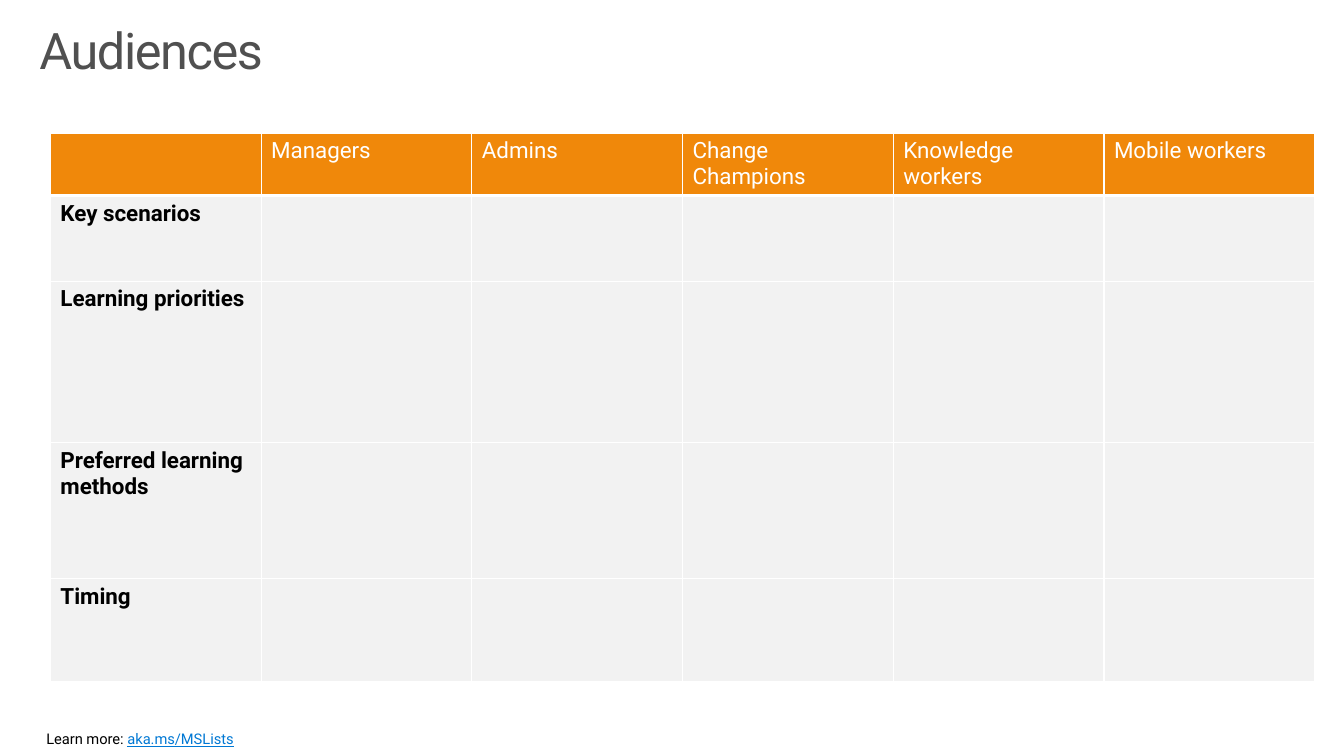
from lxml import etree
from pptx import Presentation
from pptx.dml.color import RGBColor
from pptx.enum.text import MSO_ANCHOR, PP_ALIGN
from pptx.oxml.ns import qn
from pptx.util import Inches, Pt

FONT = "Roboto"
WHITE, BLACK, GREY = "FFFFFF", "000000", "505050"
ORANGE, PALE, LINK = "F0880A", "F2F2F2", "0078D4"

AUDIENCES = ["Managers", "Admins", "Change Champions", "Knowledge workers",
             "Mobile workers"]
TOPICS = ["Key scenarios", "Learning priorities", "Preferred learning methods",
          "Timing"]
ROW_HEIGHTS = [0.62, 0.85, 1.6, 1.35, 1.02]
COLUMN_WIDTH = 2.09


def color(value):
    return RGBColor.from_string(value)


def set_font(font, size, value, bold=False):
    font.name = FONT
    font.size = Pt(size)
    font.bold = bold
    font.color.rgb = color(value)


def prepare_frame(frame):
    frame.margin_left = frame.margin_top = 0
    frame.margin_right = frame.margin_bottom = 0
    frame.word_wrap = True
    frame.vertical_anchor = MSO_ANCHOR.TOP
    para = frame.paragraphs[0]
    para.line_spacing = 0.9
    para.alignment = PP_ALIGN.LEFT
    return para


def add_title(page, text):
    title = page.shapes.title
    title.left, title.top = Inches(0.39), Inches(0.26)
    title.width, title.height = Inches(12.75), Inches(0.55)
    para = prepare_frame(title.text_frame)
    span = para.add_run()
    span.text = text
    set_font(span.font, 36, GREY)
    span.font._element.set("spc", "-100")


def set_borders(cell, bottom_width):
    properties = cell._tc.get_or_add_tcPr()
    widths = {"a:lnL": 1, "a:lnR": 1, "a:lnT": 1, "a:lnB": bottom_width}
    for position, (tag, width) in enumerate(widths.items()):
        line = etree.Element(qn(tag), w=str(Pt(width)))
        fill = etree.SubElement(line, qn("a:solidFill"))
        etree.SubElement(fill, qn("a:srgbClr"), val=WHITE)
        properties.insert(position, line)


def fill_cell(cell, text, is_header):
    cell.fill.solid()
    cell.fill.fore_color.rgb = color(ORANGE if is_header else PALE)
    set_borders(cell, 3 if is_header else 1)
    para = cell.text_frame.paragraphs[0]
    if text:
        para.text = text
    set_font(para.font, 16, WHITE if is_header else BLACK, bold=not is_header)


def add_audience_table(page):
    rows = [[""] + AUDIENCES]
    rows += [[topic] + [""] * len(AUDIENCES) for topic in TOPICS]
    count = len(rows[0])
    frame = page.shapes.add_table(
        len(rows), count, Inches(0.5), Inches(1.32),
        Inches(COLUMN_WIDTH * count), Inches(sum(ROW_HEIGHTS)))
    table = frame.table
    for column in table.columns:
        column.width = Inches(COLUMN_WIDTH)
    for r, (texts, height) in enumerate(zip(rows, ROW_HEIGHTS)):
        table.rows[r].height = Inches(height)
        for c, text in enumerate(texts):
            fill_cell(table.cell(r, c), text, is_header=r == 0)


def add_footnote(page, label, address):
    box = page.shapes.add_textbox(Inches(0.46), Inches(7.26),
                                  Inches(4.17), Inches(0.16))
    para = prepare_frame(box.text_frame)
    para.space_after = Pt(6)
    for text, value in ((label, BLACK), (address, LINK)):
        span = para.add_run()
        span.text = text
        set_font(span.font, 10.5, value)
    span.font.underline = True


def main():
    deck = Presentation()
    deck.slide_width, deck.slide_height = Inches(13.33), Inches(7.5)
    page = deck.slides.add_slide(deck.slide_layouts[5])
    add_title(page, "Audiences")
    add_audience_table(page)
    add_footnote(page, "Learn more: ", "aka.ms/MSLists")
    deck.save("out.pptx")


if __name__ == "__main__":
    main()
